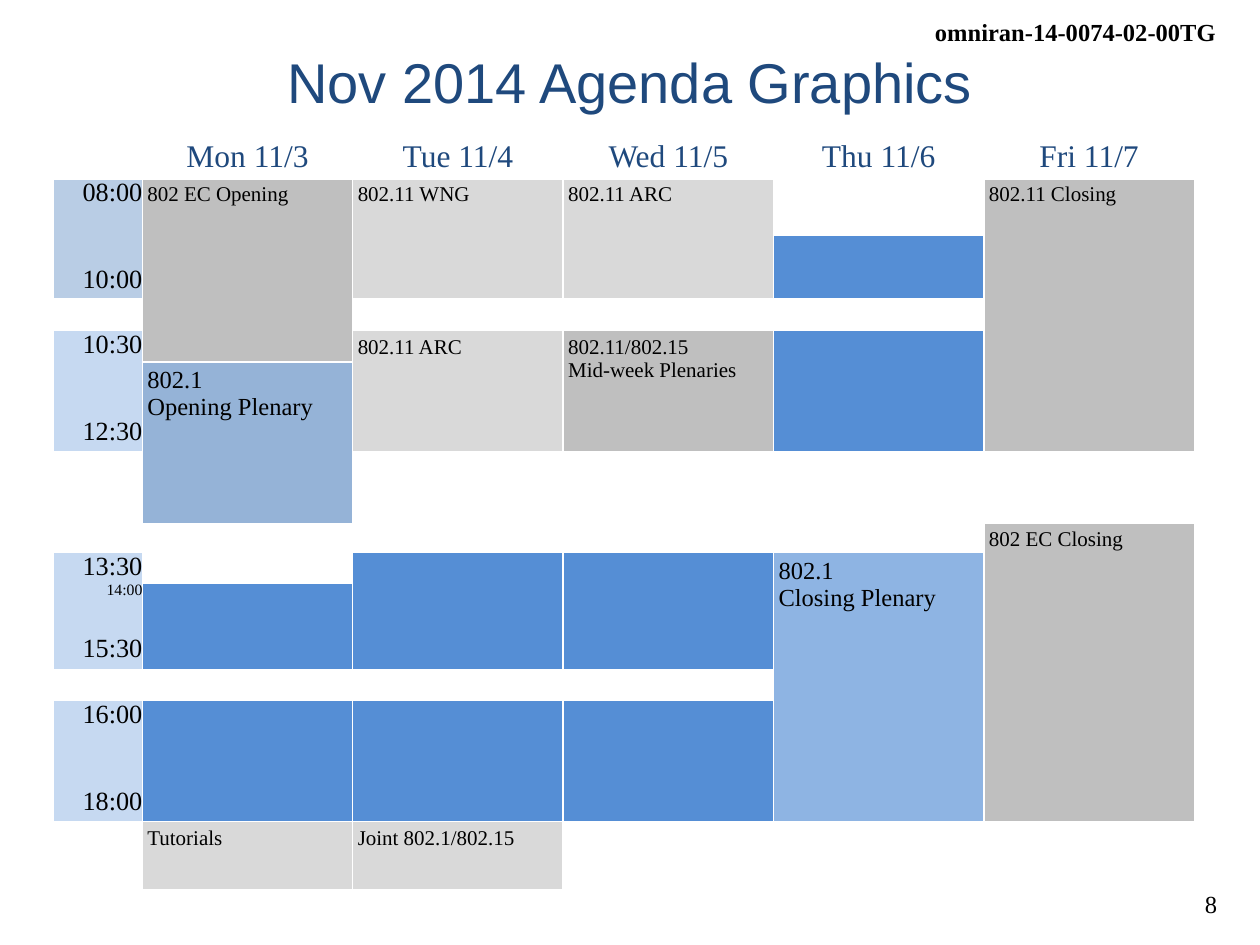
from lxml import etree
from pptx import Presentation
from pptx import util as u
from pptx.dml.color import RGBColor
from pptx.enum import text
from pptx.oxml import ns

WHITE = RGBColor(0xFF, 0xFF, 0xFF)
BLACK = RGBColor(0, 0, 0)
NAVY = RGBColor(0x1F, 0x49, 0x7D)
HOURS_EARLY = RGBColor(0xB9, 0xCD, 0xE5)
HOURS = RGBColor(0xC6, 0xD9, 0xF1)
LIGHT_GRAY = RGBColor(0xD9, 0xD9, 0xD9)
GRAY = RGBColor(0xBF, 0xBF, 0xBF)
SESSION = RGBColor(0x55, 0x8E, 0xD5)
OPENING = RGBColor(0x95, 0xB3, 0xD7)
CLOSING = RGBColor(0x8E, 0xB4, 0xE3)

DAYS = ["Mon 11/3", "Tue 11/4", "Wed 11/5", "Thu 11/6", "Fri 11/7"]
COLS = [0.71] + [1.67] * 5
ROWS = [0.29, 0.46, 0.49, 0.25, 0.25, 0.67, 0.57,
        0.23, 0.25, 0.64, 0.24, 0.95, 0.27, 0.27]

# row, column, row span, colour, start, middle, end, gap before end
TIMES = [
    (1, 2, HOURS_EARLY, ["08:00", "10:00"], 33.2),
    (4, 2, HOURS, ["10:30", "12:30"], 33.2),
    (8, 2, HOURS, ["13:30", "14:00", "15:30"], 20.5),
    (11, 1, HOURS, ["16:00", "18:00"], 33.2),
]
EVENTS = [
    (1, 1, 4, GRAY, "802 EC Opening", 12),
    (1, 2, 2, LIGHT_GRAY, "802.11 WNG", 12),
    (1, 3, 2, LIGHT_GRAY, "802.11 ARC", 12),
    (1, 5, 5, GRAY, "802.11 Closing", 12),
    (4, 2, 2, LIGHT_GRAY, "802.11 ARC", 12),
    (4, 3, 2, GRAY, "802.11/802.15 \vMid-week Plenaries", 12),
    (5, 1, 2, OPENING, "802.1\vOpening Plenary", 14),
    (7, 5, 5, GRAY, "802 EC Closing", 12),
    (8, 4, 4, CLOSING, "802.1\vClosing Plenary", 14),
    (12, 1, 2, LIGHT_GRAY, "Tutorials", 12),
    (12, 2, 2, LIGHT_GRAY, "Joint 802.1/802.15", 12),
]
SESSIONS = [(2, 4, 1), (4, 4, 2), (8, 2, 2), (8, 3, 2), (9, 1, 1),
            (11, 1, 1), (11, 2, 1), (11, 3, 1)]
GAPS = [(6, 0), (6, 2), (6, 3), (6, 4), (7, 1), (12, 0), (12, 3), (12, 4)]


class Agenda:
    serif = "Times New Roman"
    sans = "Arial"

    def __init__(self, slide):
        self.s = slide

    def style(self, p, size, color=BLACK, align=text.PP_ALIGN.LEFT,
              font=serif, bold=False):
        p.alignment = align
        p.font.name = font
        p.font.size = u.Pt(size)
        p.font.color.rgb = color
        p.font.bold = bold

    def label(self, box, words, size, wrap=False, **style):
        sp = self.s.shapes.add_textbox(*map(u.Inches, box))
        tf = sp.text_frame
        tf.word_wrap = wrap
        tf.vertical_anchor = text.MSO_ANCHOR.MIDDLE
        tf.text = words
        self.style(tf.paragraphs[0], size, **style)

    def table(self, left, top, cols, rows):
        frame = self.s.shapes.add_table(
            len(rows), len(cols), u.Inches(left), u.Inches(top),
            u.Inches(sum(cols)), u.Inches(sum(rows)))
        self.t = frame.table
        self.t.first_row = self.t.horz_banding = False
        for column, width in zip(self.t.columns, cols):
            column.width = u.Inches(width)
        for i, height in enumerate(rows):
            self.t.rows[i].height = u.Inches(height)
            for j in range(len(cols)):
                cell = self.t.cell(i, j)
                self.paint(cell, WHITE)
                self.borders(cell, i)
                p = cell.text_frame.paragraphs[0]
                etree.SubElement(p._p, ns.qn("a:endParaRPr"), sz="900")

    def paint(self, cell, color, inset=0):
        cell.fill.solid()
        cell.fill.fore_color.rgb = color
        cell.margin_left = cell.margin_right = u.Inches(inset)
        cell.margin_top = cell.margin_bottom = u.Inches(inset)

    def borders(self, cell, row):
        tc_pr = cell._tc.get_or_add_tcPr()
        for i, side in enumerate("LRTB"):
            heavy = (row, side) in [(0, "B"), (1, "T")]
            ln = etree.Element(ns.qn("a:ln" + side),
                               w=str(u.Pt(3 if heavy else 1)))
            fill = etree.SubElement(ln, ns.qn("a:solidFill"))
            etree.SubElement(fill, ns.qn("a:srgbClr"), val=str(WHITE))
            tc_pr.insert(i, ln)

    def block(self, row, col, span, color, inset=0):
        cell = self.t.cell(row, col)
        if span > 1:
            cell.merge(self.t.cell(row + span - 1, col))
        self.paint(cell, color, inset)
        return cell.text_frame

    def heading(self, col, words):
        tf = self.block(0, col, 1, WHITE)
        tf.text = words
        self.style(tf.paragraphs[0], 18, NAVY, text.PP_ALIGN.CENTER)

    def event(self, row, col, span, color, words, size):
        p = self.block(row, col, span, color, 0.04).paragraphs[0]
        p.text = words
        self.style(p, size)

    def hours(self, row, span, color, times, gap):
        tf = self.block(row, 0, span, color)
        tf.text = "\n".join(times)
        for p in tf.paragraphs:
            self.style(p, 9 if p.text == "14:00" else 15,
                       align=text.PP_ALIGN.RIGHT)
        p.space_before = u.Pt(gap)


def main():
    prs = Presentation()
    prs.slide_width, prs.slide_height = u.Inches(10), u.Inches(7.5)
    agenda = Agenda(prs.slides.add_slide(prs.slide_layouts[6]))

    right = text.PP_ALIGN.RIGHT
    agenda.label((7.3, 0.08, 2.45, 0.34), "omniran-14-0074-02-00TG", 14,
                 align=right, bold=True)
    agenda.label((9.33, 7, 0.43, 0.34), "8", 14, align=right)
    agenda.label((0.5, 0.25, 9, 0.78), "Nov 2014 Agenda Graphics", 32,
                 wrap=True, color=NAVY, align=text.PP_ALIGN.CENTER,
                 font=agenda.sans)

    agenda.table(0.42, 1.11, COLS, ROWS)
    for col, day in enumerate(DAYS, 1):
        agenda.heading(col, day)
    for slot in TIMES:
        agenda.hours(*slot)
    for event in EVENTS:
        agenda.event(*event)
    for row, col, span in SESSIONS:
        agenda.block(row, col, span, SESSION)
    for row, col in GAPS:
        agenda.block(row, col, 2, WHITE)
    prs.save("out.pptx")


if __name__ == "__main__":
    main()
